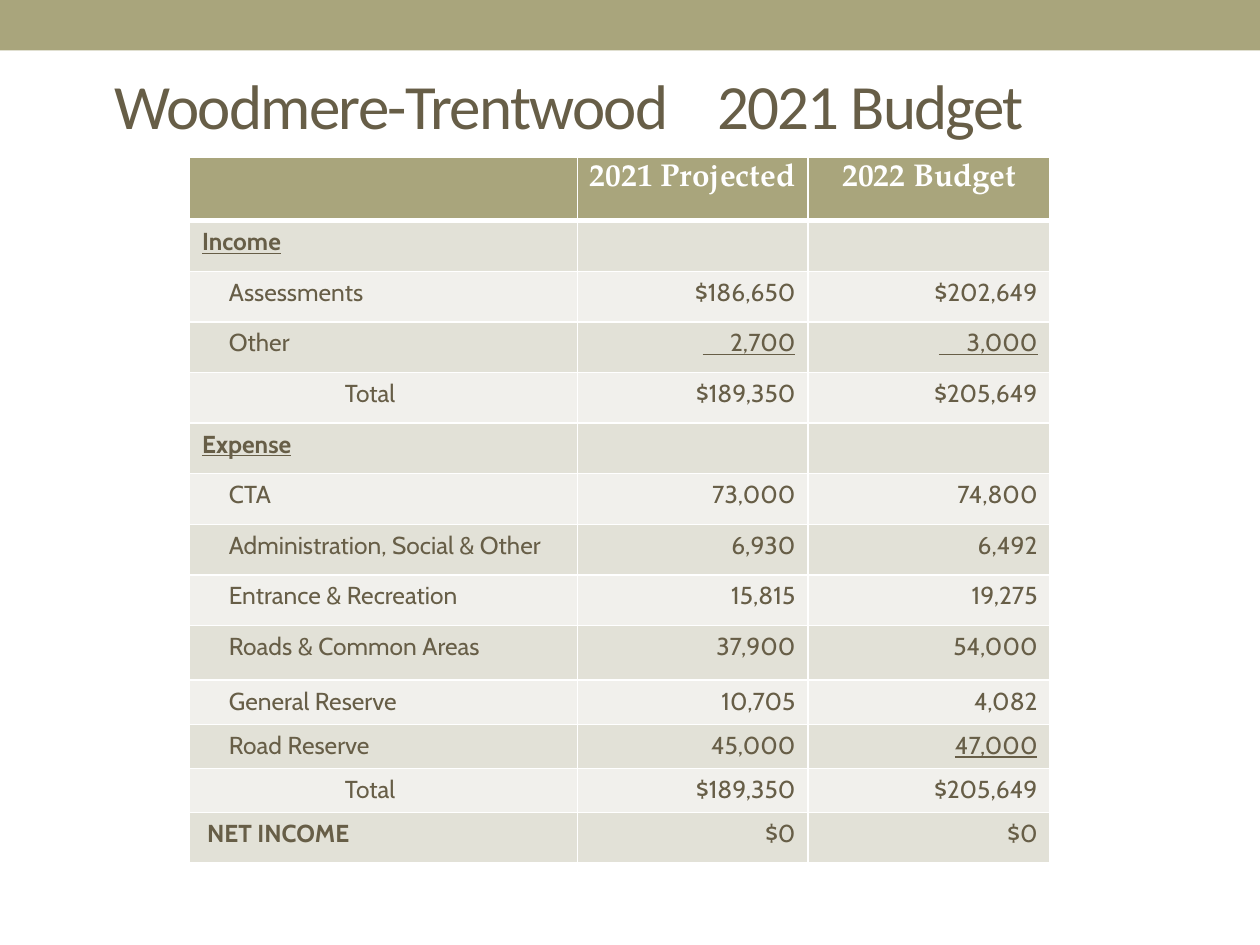
from lxml.etree import SubElement
from pptx import Presentation
from pptx.dml.color import RGBColor
from pptx.enum.shapes import MSO_SHAPE
from pptx.enum.text import MSO_ANCHOR, PP_ALIGN
from pptx.oxml.ns import qn
from pptx.util import Cm, Pt

OLIVE, BROWN, WHITE = "A9A57C", "675E47", "FFFFFF"
BANDS = ("E2E1D7", "F1F0EC")
ITEM, TOTAL, NET = 0.54, 2.88, 0.1
HEADER = ("", "2021 Projected", "2022 Budget")
ROWS = [
    ("Income", None, "", ""),
    ("Assessments", ITEM, "$186,650", "$202,649"),
    ("Other", ITEM, "_     2,700", "_     3,000"),
    ("Total", TOTAL, "$189,350", "$205,649"),
    ("Expense", None, "", ""),
    ("CTA", ITEM, "73,000", "74,800"),
    ("Administration, Social & Other", ITEM, "6,930", "6,492"),
    ("Entrance & Recreation", ITEM, "15,815", "19,275"),
    ("Roads & Common Areas", ITEM, "37,900", "54,000"),
    ("General Reserve", ITEM, "10,705", "4,082"),
    ("Road Reserve", ITEM, "45,000", "_47,000"),
    ("Total", TOTAL, "$189,350", "$205,649"),
    ("NET INCOME", NET, "$0", "$0"),
]
COL_WIDTHS = (7.82, 4.65, 4.88)
ROW_HEIGHTS = [1.27] + [1.02] * 8 + [1.1] + [0.89] * 3 + [1.02]


def rgb(color):
    """Turn a hex string into a colour."""
    return RGBColor.from_string(color)


def put_text(tf, text, font="Cabin", size=14, color=BROWN, bold=False,
             underline=False, align=PP_ALIGN.LEFT, indent=0):
    """Write one formatted run into the first paragraph and return both."""
    p = tf.paragraphs[0]
    p.alignment = align
    if indent:
        p._p.get_or_add_pPr().set("marL", str(Cm(indent)))
    r = p.add_run()
    r.text = text
    f = r.font
    f.name, f.size, f.bold, f.underline = font, Pt(size), bold, underline
    f.color.rgb = rgb(color)
    return p, r


def style_cell(cell, color, bottom=1):
    """Fill a cell and draw its white borders."""
    tcPr = cell._tc.get_or_add_tcPr()
    for side, width in (("L", 1), ("R", 1), ("T", 1), ("B", bottom)):
        ln = SubElement(tcPr, qn(f"a:ln{side}"), w=str(Pt(width)))
        fill = SubElement(ln, qn("a:solidFill"))
        SubElement(fill, qn("a:srgbClr"), val=WHITE)
    cell.fill.solid()
    cell.fill.fore_color.rgb = rgb(color)


def add_band(s, x, y, w, h):
    """Draw the coloured band along the top."""
    sp = s.shapes.add_shape(MSO_SHAPE.RECTANGLE, Cm(x), Cm(y), Cm(w), Cm(h))
    sp.shadow.inherit = False
    sp.fill.solid()
    sp.fill.fore_color.rgb = rgb(OLIVE)
    sp.line.fill.background()


def add_title(s, x, y, w, h):
    """Write the title in two parts parted by a tab stop."""
    tf = s.shapes.add_textbox(Cm(x), Cm(y), Cm(w), Cm(h)).text_frame
    tf.word_wrap = True
    tf.vertical_anchor = MSO_ANCHOR.MIDDLE
    tf.margin_left, tf.margin_bottom = Cm(1.24), Cm(1.6)
    p, r = put_text(tf, "Woodmere-Trentwood\t2021 Budget", font="Calibri", size=36)
    r._r.get_or_add_rPr().set("spc", "-100")
    tabs = SubElement(p._p.get_or_add_pPr(), qn("a:tabLst"))
    SubElement(tabs, qn("a:tab"), pos=str(Cm(12.15)), algn="l")


def add_budget(s, x, y, w, h):
    """Build the budget table."""
    table = s.shapes.add_table(len(ROWS) + 1, len(HEADER),
                               Cm(x), Cm(y), Cm(w), Cm(h)).table
    for col, width in zip(table.columns, COL_WIDTHS):
        col.width = Cm(width)
    for row, height in zip(table.rows, ROW_HEIGHTS):
        row.height = Cm(height)
    for c, text in enumerate(HEADER):
        cell = table.cell(0, c)
        style_cell(cell, OLIVE, bottom=3)
        cell.margin_left = cell.margin_right = Cm(0.2)
        if text:
            put_text(cell.text_frame, text, font="TeX Gyre Pagella", size=18,
                     color=WHITE, bold=True, align=PP_ALIGN.CENTER)
    for i, (label, indent, *amounts) in enumerate(ROWS):
        cells = [table.cell(i + 1, c) for c in range(len(HEADER))]
        for cell in cells:
            style_cell(cell, BANDS[i % 2])
        put_text(cells[0].text_frame, label, bold=indent in (None, NET),
                 underline=indent is None, indent=indent or 0)
        for cell, amount in zip(cells[1:], amounts):
            if amount:
                put_text(cell.text_frame, amount.lstrip("_"),
                         underline=amount.startswith("_"), align=PP_ALIGN.RIGHT)


def main():
    """Build and save the slide."""
    prs = Presentation()
    prs.slide_width, prs.slide_height = Cm(25.4), Cm(19.05)
    s = prs.slides.add_slide(prs.slide_layouts[6])
    add_band(s, 0, 0, 25.4, 1.02)
    add_title(s, 1.07, 1.47, 22.86, 2.74)
    add_budget(s, 3.82, 3.18, sum(COL_WIDTHS), sum(ROW_HEIGHTS))
    prs.save("out.pptx")


if __name__ == "__main__":
    main()
